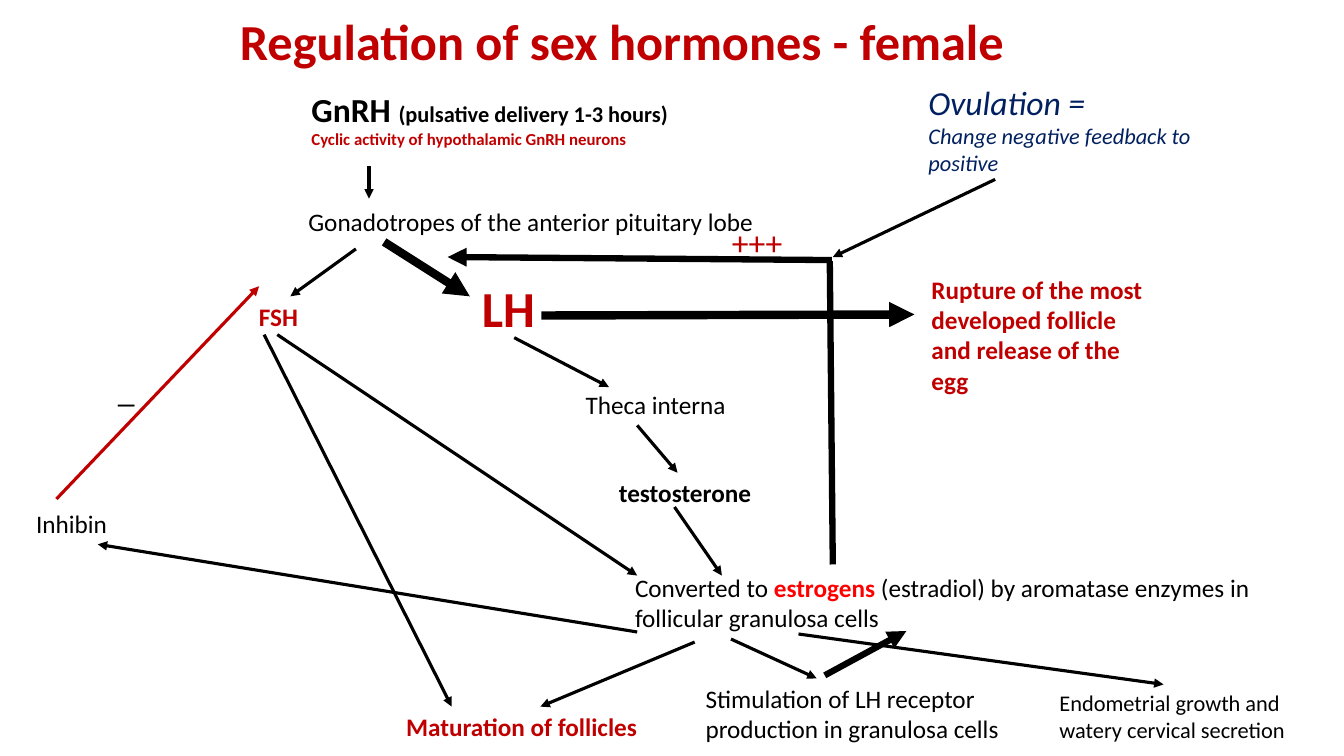
from pptx import Presentation
from pptx.util import Inches, Pt
from pptx.dml.color import RGBColor as RGB
from pptx.enum.shapes import MSO_CONNECTOR as LINK
from pptx.enum.text import MSO_ANCHOR as ANCHOR
from lxml.etree import SubElement as add_node
from pptx.oxml.ns import qn

BLACK, RED, NAVY, BRIGHT = "000000", "C00000", "002060", "FF0000"

deck = Presentation()
deck.slide_width, deck.slide_height = Inches(13.33), Inches(7.5)
slide = deck.slides.add_slide(deck.slide_layouts[6])


def add_text(left, top, width, height, *lines):
    box = slide.shapes.add_textbox(Inches(left), Inches(top), Inches(width), Inches(height))
    frame = box.text_frame
    frame.word_wrap = True
    for i, line in enumerate(lines):
        para = frame.add_paragraph() if i else frame.paragraphs[0]
        for words, size, color, style in line:
            run = para.add_run()
            run.text = words
            font = run.font
            font.name, font.size = "Calibri", Pt(size)
            font.bold, font.italic = style == "b", style == "i"
            font.color.rgb = RGB.from_string(color)
    return frame


def add_line(x1, y1, x2, y2, width=2.25, color=BLACK, arrow=True):
    link = slide.shapes.add_connector(
        LINK.STRAIGHT, Inches(x1), Inches(y1), Inches(x2), Inches(y2))
    link.line.width = Pt(width)
    link.line.color.rgb = RGB.from_string(color)
    if arrow:
        add_node(link.line._get_or_add_ln(), qn("a:tailEnd"), type="triangle")
    add_node(link._element.spPr, qn("a:effectLst"))


title = add_text(2.28, 0, 11.05, 0.88, [("Regulation of sex hormones - female", 36, RED, "b")])
title.vertical_anchor = ANCHOR.MIDDLE
title.paragraphs[0].line_spacing = 0.9

add_text(2.99, 0.83, 4.43, 0.71,
         [("GnRH ", 24, BLACK, "b"), ("(pulsative delivery 1-3 hours)", 16, BLACK, "b")],
         [("Cyclic activity of hypothalamic GnRH neurons", 12, RED, "b")])
add_text(9.11, 0.76, 2.91, 1.04,
         [("Ovulation =", 24, NAVY, "i")],
         [("Change negative feedback to positive", 16, NAVY, "i")])
add_text(6.2, 5.63, 6.37, 0.71,
         [("Converted to ", 18, BLACK, ""), ("estrogens", 18, BRIGHT, "b"),
          (" (estradiol) by aromatase enzymes in follicular granulosa cells", 18, BLACK, "")])

labels = [
    (2.96, 2, 4.81, 0.4, "Gonadotropes of the anterior pituitary lobe", 18, BLACK, ""),
    (2.47, 2.94, 1.33, 0.4, "FSH", 18, RED, "b"),
    (4.68, 2.7, 1.78, 0.71, "LH", 36, RED, "b"),
    (5.71, 3.81, 2.03, 0.4, "Theca interna", 18, BLACK, ""),
    (6.04, 4.69, 2.06, 0.4, "testosterone", 18, BLACK, "b"),
    (6.9, 6.73, 3.39, 0.71, "Stimulation of LH receptor production in granulosa cells", 18, BLACK, ""),
    (0.26, 4.99, 1.43, 0.4, "Inhibin", 18, BLACK, ""),
    (1.07, 3.61, 0.75, 0.5, "_", 24, BLACK, ""),
    (3.93, 7.01, 2.86, 0.4, "Maturation of follicles", 18, RED, "b"),
    (10.41, 6.79, 2.94, 0.64, "Endometrial growth and watery cervical secretion", 16, BLACK, ""),
    (7.16, 2.15, 0.75, 0.5, "+++", 24, RED, ""),
    (9.14, 2.67, 2.4, 1.31, "Rupture of the most developed follicle and release of the egg", 18, RED, "b"),
]
for left, top, width, height, *run in labels:
    add_text(left, top, width, height, [run])

thin = [
    (3.66, 1.65, 3.66, 1.97),
    (3.53, 2.47, 2.88, 2.94),
    (5.1, 3.35, 6.04, 3.84),
    (6.32, 4.22, 6.72, 4.69),
    (6.69, 5.03, 7.16, 5.71),
    (7.25, 6.34, 8.1, 6.73),
    (2.75, 3.32, 6.32, 5.71),
    (6.32, 6.27, 0.97, 5.4),
    (6.89, 6.37, 5.36, 7.01),
    (2.62, 3.32, 4.48, 7.01),
    (7.92, 6.29, 11.54, 6.79),
    (9.87, 1.78, 8.26, 2.55),
]
for ends in thin:
    add_line(*ends)

add_line(0.56, 4.95, 2.57, 2.84, color=RED)
add_line(8.26, 5.6, 8.23, 2.59, 4.5, arrow=False)
add_line(8.25, 2.58, 4.44, 2.55, 4.5)
add_line(8.18, 6.7, 8.99, 6.26, 4.5)
add_line(3.81, 2.4, 4.66, 2.94, 6)
add_line(5.37, 3.13, 9.07, 3.12, 6)

deck.save("out.pptx")
